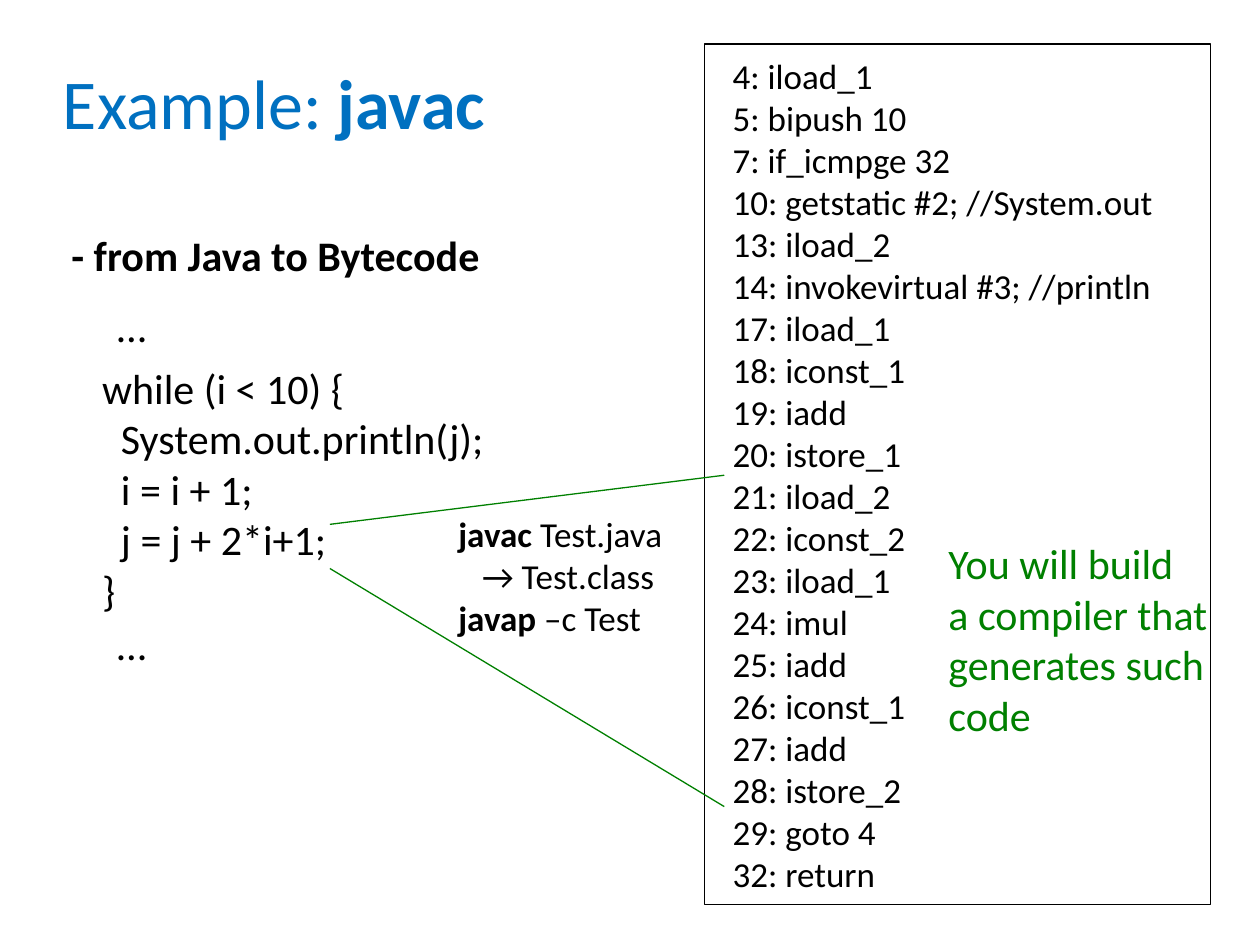
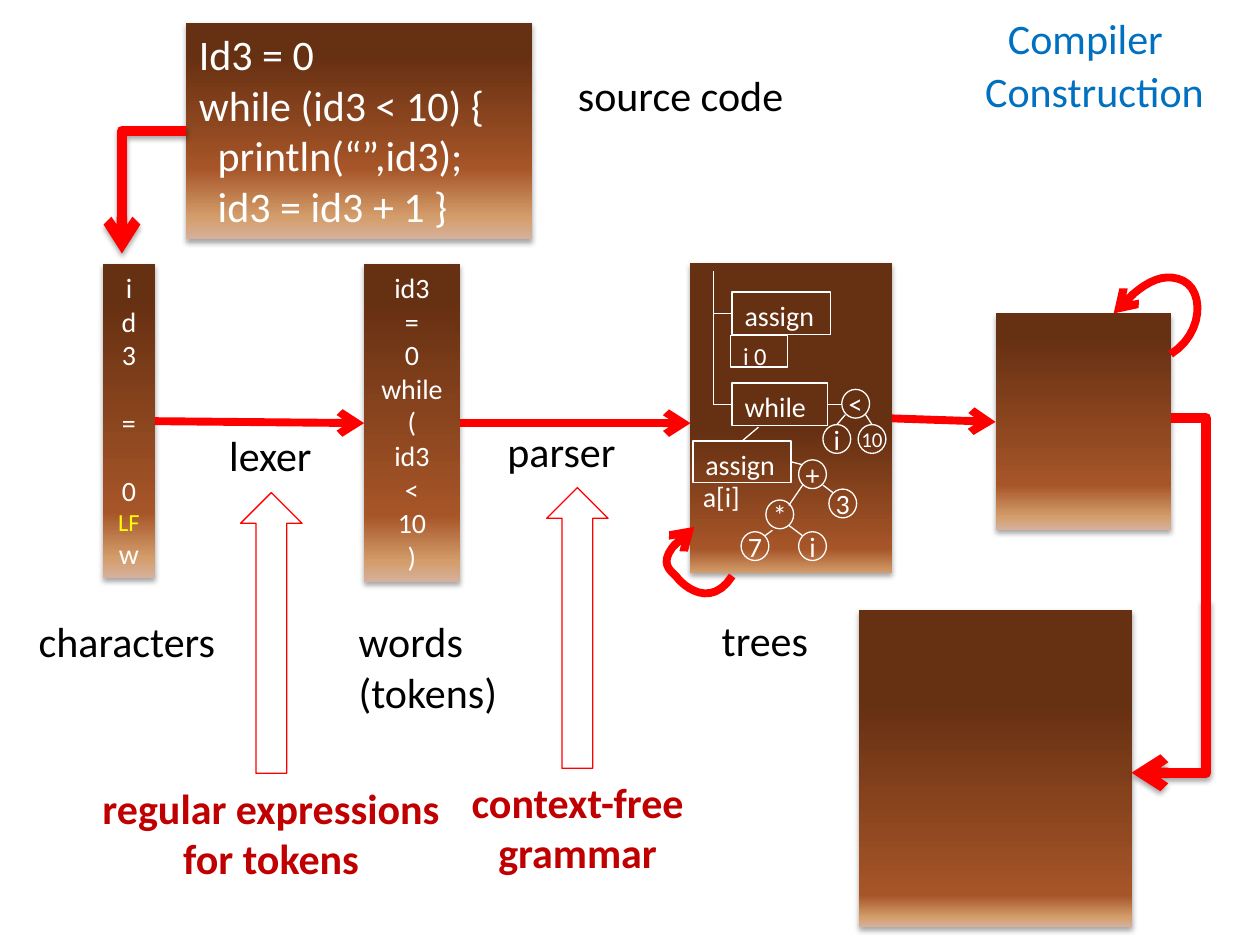
import lxml.etree
import pptx
import pptx.dml.color
import pptx.enum.dml
import pptx.enum.shapes
import pptx.enum.text
import pptx.oxml
import pptx.oxml.ns
import pptx.util

Cm = pptx.util.Cm
Pt = pptx.util.Pt
SHAPE = pptx.enum.shapes.MSO_SHAPE
CONNECTOR = pptx.enum.shapes.MSO_CONNECTOR
ANCHOR = pptx.enum.text.MSO_ANCHOR
CENTER = pptx.enum.text.PP_ALIGN.CENTER
qn = pptx.oxml.ns.qn

BLACK, WHITE, YELLOW = "000000", "FFFFFF", "FFFF00"
BLUE, GREEN, RED, DARK_RED = "0070C0", "008000", "FF0000", "C00000"
BROWNS = ("D6B19C", "D49E6C", "A65528", "663012")
TOP, LEFT, BOTTOM, RIGHT = range(4)
LABEL = {"wrap": False}
HEADING = {"color": BLUE}
TREE_TEXT = {"size": 16, "color": WHITE}
COLUMN = {**TREE_TEXT, "align": CENTER}
FORMALISM = {**LABEL, "color": DARK_RED, "bold": True, "align": CENTER}


def color_of(value):
    return pptx.dml.color.RGBColor.from_string(value)


def line(*spans, indent=0, **paragraph):
    return spans, indent, paragraph


def bezier(start, first, second, end, steps=12):
    for step in range(1, steps + 1):
        t = step / steps
        weights = ((1 - t) ** 3, 3 * t * (1 - t) ** 2, 3 * t * t * (1 - t), t ** 3)
        points = (start, first, second, end)
        yield tuple(sum(w * p[axis] for w, p in zip(weights, points)) for axis in (0, 1))


class Slides:
    font = "Calibri"

    def __init__(self):
        self.deck = pptx.Presentation()
        self.deck.slide_width, self.deck.slide_height = Cm(25.4), Cm(19.05)
        self.page = None

    def new_page(self):
        self.page = self.deck.slides.add_slide(self.deck.slide_layouts[6])

    def set_text(self, box, lines, size=24, color=BLACK, bold=False, align=None,
                 anchor=ANCHOR.TOP, wrap=True, inset=None):
        frame = box.text_frame
        settings = {"word_wrap": wrap, "vertical_anchor": anchor}
        if inset is not None:
            for side in ("left", "top", "right", "bottom"):
                settings["margin_" + side] = Cm(inset)
        for name, value in settings.items():
            setattr(frame, name, value)
        for index, content in enumerate(lines):
            spans, indent, paragraph = line(content) if isinstance(content, str) else content
            para = frame.add_paragraph() if index else frame.paragraphs[0]
            for name, value in {"alignment": align, **paragraph}.items():
                setattr(para, name, value)
            if indent:
                para._p.get_or_add_pPr().set("marL", str(Cm(indent)))
            for part in spans:
                words, changes = (part, {}) if isinstance(part, str) else part
                look = {"size": size, "color": color, "bold": bold, **changes}
                span = para.add_run()
                span.text = words
                values = {"name": self.font, "size": Pt(look["size"]), "bold": look["bold"]}
                for name, value in values.items():
                    setattr(span.font, name, value)
                span.font.color.rgb = color_of(look["color"])

    def text(self, lines, x, y, w, h=1.27, **style):
        box = self.page.shapes.add_textbox(Cm(x), Cm(y), Cm(w), Cm(h))
        self.set_text(box, lines, **style)

    def shape(self, kind, x, y, w, h, lines=(), outline=None, fill=None, **style):
        box = self.page.shapes.add_shape(kind, Cm(x), Cm(y), Cm(w), Cm(h))
        box.shadow.inherit = False
        if fill:
            box.fill.solid()
            box.fill.fore_color.rgb = color_of(fill)
        else:
            box.fill.background()
        if outline:
            self.stroke(box, outline, 0.75)
        else:
            box.line.fill.background()
        self.set_text(box, lines, **style)
        return box

    def brown_box(self, stops, x, y, w, h, lines=(), **style):
        box = self.shape(SHAPE.RECTANGLE, x, y, w, h, lines, **style)
        box.fill.gradient()
        box.fill.gradient_angle = 90
        stop_list = box._element.spPr.find(".//" + qn("a:gsLst"))
        for old_stop in list(stop_list):
            stop_list.remove(old_stop)
        for position, color in zip(stops, BROWNS):
            stop = lxml.etree.SubElement(stop_list, qn("a:gs"), pos=str(position * 1000))
            lxml.etree.SubElement(stop, qn("a:srgbClr"), val=color)
        self.cast_shadow(box)
        return box

    def cast_shadow(self, item):
        effects = item._element.spPr.find(qn("a:effectLst"))
        shadow = lxml.etree.SubElement(effects, qn("a:outerShdw"), blurRad="40000",
                                       dist="23000", dir="5400000", rotWithShape="0")
        black = lxml.etree.SubElement(shadow, qn("a:srgbClr"), val=BLACK)
        lxml.etree.SubElement(black, qn("a:alpha"), val="35000")

    def stroke(self, item, color, width, arrow=None):
        item.line.color.rgb = color_of(color)
        item.line.width = Pt(width)
        if arrow:
            properties = item._element.spPr.find(qn("a:ln"))
            lxml.etree.SubElement(properties, qn("a:" + arrow), type="arrow")

    def connect(self, start, end, color, width=0.75, arrow=None, kind=CONNECTOR.STRAIGHT):
        begin_point, end_point = (
            place if isinstance(place[0], (int, float)) else (0, 0) for place in (start, end))
        link = self.page.shapes.add_connector(kind, *map(Cm, begin_point + end_point))
        if begin_point is not start:
            link.begin_connect(*start)
        if end_point is not end:
            link.end_connect(*end)
        self.stroke(link, color, width, arrow)
        lxml.etree.SubElement(link._element.spPr, qn("a:effectLst"))
        return link

    def elbow(self, start, end, arrow=None):
        link = self.connect(start, end, RED, 6, arrow, CONNECTOR.ELBOW)
        link._element.spPr.find(qn("a:prstGeom")).set("prst", "bentConnector2")
        if arrow:
            self.cast_shadow(link)

    def loop(self, *points):
        builder = self.page.shapes.build_freeform(*map(Cm, points[0]))
        for first in range(0, len(points) - 1, 3):
            curve = bezier(*points[first:first + 4])
            builder.add_line_segments([(Cm(x), Cm(y)) for x, y in curve], close=False)
        curl = builder.convert_to_shape()
        curl.shadow.inherit = False
        curl.fill.background()
        self.stroke(curl, RED, 4.5, "tailEnd")

    def node(self, word, x, y, size=16):
        self.shape(SHAPE.OVAL, x, y, 0.56, 0.58, [word], outline=WHITE, size=size, color=WHITE,
                   align=CENTER, anchor=ANCHOR.MIDDLE, wrap=False, inset=0)


def build_javac(slides):
    slides.new_page()
    middle = {"anchor": ANCHOR.MIDDLE}
    slides.text([line("Example: ", ("javac", {"bold": True}))],
                1.02, 0.46, 22.86, 3.18, size=40, **HEADING, **middle)
    body = ["System.out.println(j);", "i = i + 1;", "j = j + 2*i+1;"]
    slides.text([line("while (i < 10) {", indent=0.77),
                 *(line(statement, indent=1.15) for statement in body),
                 line("}", indent=0.77)], 1.04, 7.16, 9.19, 5.38, **middle)
    bytecode = [
        "4: iload_1", "5: bipush 10", "7: if_icmpge 32", "10: getstatic #2; //System.out",
        "13: iload_2", "14: invokevirtual #3; //println", "17: iload_1", "18: iconst_1",
        "19: iadd", "20: istore_1", "21: iload_2", "22: iconst_2", "23: iload_1", "24: imul",
        "25: iadd", "26: iconst_1", "27: iadd", "28: istore_2", "29: goto 4", "32: return"]
    slides.shape(SHAPE.RECTANGLE, 14.2, 0.89, 10.21, 17.35,
                 [line(step, indent=0.32) for step in bytecode],
                 outline=BLACK, size=20, **middle)
    slides.text([line(("javac", {"bold": True}), " Test.java"),
                 line("→ Test.class", indent=0.48),
                 line(("javap", {"bold": True}), " –c Test")],
                8.99, 10.19, 4.83, 2.82, size=20, **LABEL, **middle)
    for source_y, bytecode_y in ((10.57, 9.58), (11.46, 16.26)):
        slides.connect((6.65, source_y), (14.6, bytecode_y), GREEN)
    slides.text(["You will build", "a compiler that", "generates such code"],
                18.87, 10.69, 6.4, 4.37, color=GREEN, **middle)
    slides.text(["- from Java to Bytecode"], 1.19, 4.5, 10.92, bold=True, **middle)
    for y in (5.94, 12.34):
        slides.text(["…"], 2.11, y, 1.12, **LABEL)


def build_syntax_tree(slides):
    tree = slides.brown_box((0, 0, 8, 46), 13.92, 5.31, 4.06, 6.25)
    framed = {"outline": WHITE, **TREE_TEXT}
    assign = slides.shape(SHAPE.RECTANGLE, 14.76, 5.89, 1.98, 0.86, ["assign"], **framed)
    loop = slides.shape(SHAPE.RECTANGLE, 14.76, 7.72, 1.93, 0.86, ["while"], **framed)
    slides.shape(SHAPE.RECTANGLE, 14.73, 6.76, 1.14, 0.64, ["i 0"], **{**framed, "size": 14})
    store = slides.shape(SHAPE.RECTANGLE, 13.97, 8.89, 1.98, 0.84, ["assign"], **framed)
    slides.text(["a[i]"], 13.92, 9.55, 1.27, 0.94, **TREE_TEXT, **LABEL)
    for word, x, y in (("+", 16.1, 9.27), ("*", 15.44, 10.08), ("3", 16.71, 9.86),
                       ("7", 14.94, 10.72), ("i", 16.1, 10.72), ("<", 16.97, 7.85),
                       ("i", 16.59, 8.56)):
        slides.node(word, x, y)
    slides.node("10", 17.3, 8.56, size=12)
    branches = [
        ((14.38, 5.46), (14.38, 8.15)), ((assign, LEFT), (14.38, 6.32)),
        ((loop, LEFT), (14.38, 8.15)), ((loop, RIGHT), (16.97, 8.15)),
        ((store, TOP), (15.29, 8.61)), ((store, RIGHT), (16.18, 9.37)),
        ((16.18, 9.78), (15.9, 10.19)), ((15.57, 10.69), (15.42, 10.8)),
        ((16.59, 9.78), (16.79, 9.93)), ((15.9, 10.59), (16.18, 10.8)),
        ((17.04, 8.36), (16.87, 8.56)), ((17.45, 8.36), (17.58, 8.56))]
    for start, end in branches:
        slides.connect(start, end, WHITE)
    return tree


def build_compiler(slides):
    slides.new_page()
    slides.brown_box((0, 10, 33, 85), 3.76, 0.46, 6.96, 4.37,
                     ["Id3 = 0", "while (id3 < 10) {", line("println(“”,id3);", indent=0.38),
                      line("id3 = id3 + 1 }", indent=0.38)], color=WHITE)
    slides.elbow((3.76, 2.64), (2.46, 5.11), "tailEnd")
    slides.brown_box((0, 3, 10, 71), 17.32, 12.29, 5.51, 6.4)
    slides.elbow((22.81, 15.58), (24.31, 12.09), "headEnd")
    slides.text(["Compiler"], 20.07, 0.13, 4.57, **HEADING)
    slides.text(["Construction"], 19.61, 1.19, 5.33, **HEADING)

    stops = (0, 6, 21, 89)
    gap = {"space_before": Pt(19.5)}
    characters = slides.brown_box(
        stops, 2.08, 5.33, 1.04, 6.32,
        ["i", "d", "3", line("=", **gap), line("0", **gap),
         line(("LF", {"size": 14, "color": YELLOW})), "w"], **COLUMN)
    tokens = slides.brown_box(
        stops, 7.34, 5.33, 1.93, 6.4,
        ["id3", "=", "0", "while", "(", "id3", "<", "10", ")"], **COLUMN)
    tree = build_syntax_tree(slides)
    result = slides.brown_box(stops, 20.07, 6.32, 3.53, 4.37)
    for start, end in (((characters, RIGHT), (tokens, LEFT)),
                       ((tokens, RIGHT), (13.92, 8.53)),
                       ((tree, RIGHT), (result, LEFT))):
        slides.connect(start, end, RED, 4.5, "tailEnd")
    slides.elbow((23.6, 8.43), (24.31, 12.09))

    for word, x, y, w in (("source code", 11.4, 1.27, 4.7), ("lexer", 4.37, 8.53, 2.18),
                          ("parser", 9.98, 8.46, 2.72), ("characters", 0.53, 12.29, 4.11),
                          ("trees", 14.3, 12.27, 2.29)):
        slides.text([word], x, y, w, **LABEL)
    slides.text(["words", "(tokens)"], 6.98, 12.29, 3.33, 2.31, **LABEL)

    slides.loop((23.6, 7.14), (24.26, 6.73), (24.28, 5.87), (23.85, 5.66),
                (23.42, 5.46), (22.99, 5.72), (22.45, 6.32))
    slides.loop((14.76, 11.61), (14.33, 12.29), (13.77, 11.81), (13.64, 11.63),
                (13.51, 11.48), (13.11, 11.3), (14, 10.62))
    for x, y in ((4.85, 9.93), (11.02, 9.83)):
        slides.shape(SHAPE.UP_ARROW, x, y, 1.24, 5.66, outline=RED, fill=WHITE)
    slides.text(["regular expressions", "for tokens"], 1.78, 15.65, 7.37, 2.31, **FORMALISM)
    slides.text(["context-free", "grammar"], 9.22, 15.52, 4.85, 2.31, **FORMALISM)


def main():
    slides = Slides()
    build_javac(slides)
    build_compiler(slides)
    slides.deck.save("out.pptx")


if __name__ == "__main__":
    main()
